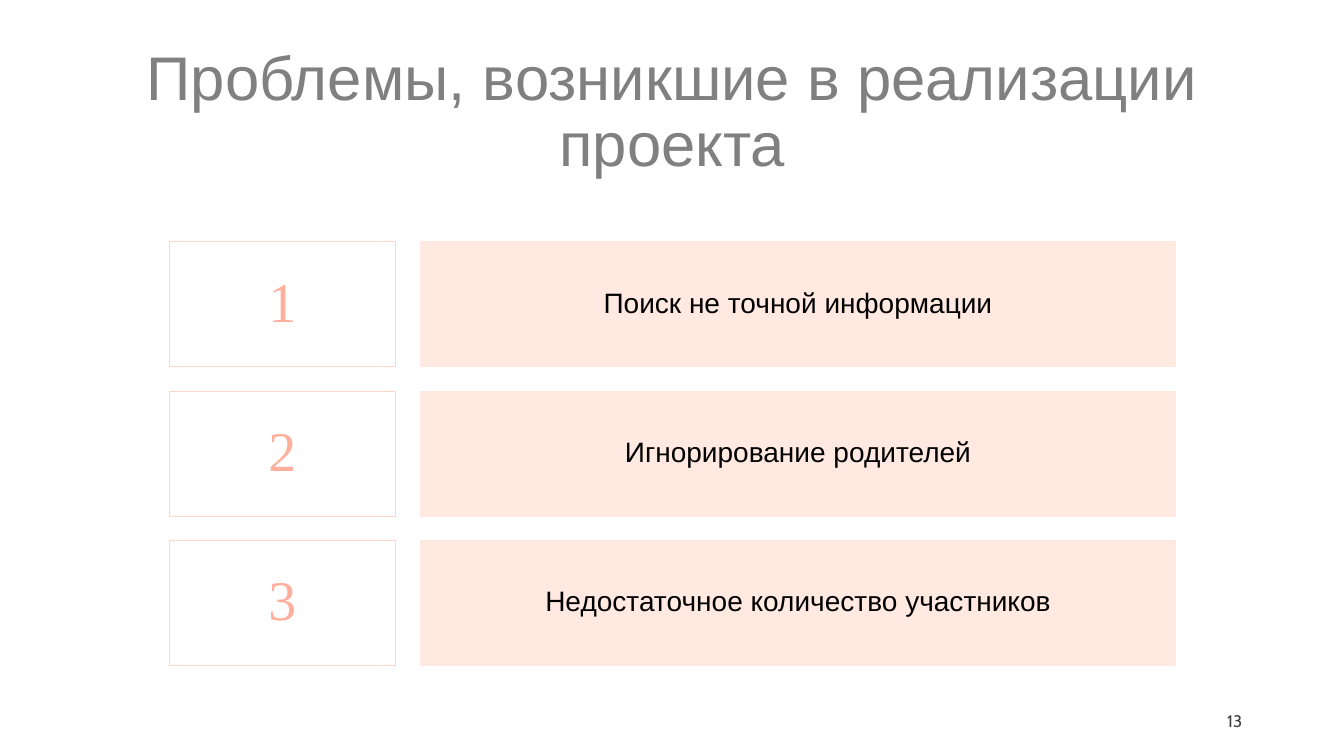
from pptx import Presentation, util as u
from pptx.dml.color import RGBColor
from pptx.enum import shapes, text

HUES = {"title": "808080", "digit": "FFB09D", "edge": "FFD7C7",
        "panel": "FFE9E0", "ink": "000000", "page": "404040"}
ALIGN = text.PP_ALIGN
ROWS = ["Поиск не точной информации",
        "Игнорирование родителей",
        "Недостаточное количество участников"]


def hue(name):
    return RGBColor.from_string(HUES[name])


def write(shape, words, font, size, color, align=ALIGN.CENTER, lead=0.9, inset=None):
    frame = shape.text_frame
    format = {"word_wrap": True, "auto_size": text.MSO_AUTO_SIZE.NONE,
              "vertical_anchor": text.MSO_ANCHOR.MIDDLE}
    if inset is not None:
        for side in ("left", "top", "right", "bottom"):
            format["margin_" + side] = u.Inches(inset)
    for key, value in format.items():
        setattr(frame, key, value)
    line = frame.paragraphs[0]
    line.text = words
    line.alignment, line.line_spacing = align, lead
    for key, value in {"name": font, "size": u.Pt(size)}.items():
        setattr(line.font, key, value)
    line.font.color.rgb = hue(color)


def add_title(slide, box, words):
    title = slide.shapes.title
    for key, value in zip(("left", "top", "width", "height"), box):
        setattr(title, key, u.Inches(value))
    write(title, words, "Arial", 44, "title")


def add_rect(slide, box, edge, fill=None):
    rect = slide.shapes.add_shape(shapes.MSO_SHAPE.RECTANGLE, *map(u.Inches, box))
    rect.shadow.inherit = False
    rect.line.color.rgb = hue(edge)
    rect.line.width = u.Pt(0.75)
    if fill:
        rect.fill.solid()
        rect.fill.fore_color.rgb = hue(fill)
    else:
        rect.fill.background()
    return rect


def add_rows(slide, box, rows):
    left, top, width, height = box
    gap = 0.24
    tall = (height - gap * (len(rows) - 1)) / len(rows)
    slim = 2.24
    start = slim + 0.25
    for i, words in enumerate(rows):
        y = top + i * (tall + gap)
        # Number cell
        cell = add_rect(slide, (left, y, slim, tall), "edge")
        write(cell, str(i + 1), "Times New Roman", 40, "digit")
        # Problem panel
        panel = add_rect(slide, (left + start, y, width - start, tall), "panel", "panel")
        write(panel, words, "Arial", 20, "ink", inset=0)


def add_page(slide, box, number):
    note = slide.shapes.add_textbox(*map(u.Inches, box))
    write(note, number, "Cabin", 12, "page", ALIGN.RIGHT, 1)


def main():
    deck = Presentation()
    deck.slide_width, deck.slide_height = u.Inches(13.33), u.Inches(7.5)
    slide = deck.slides.add_slide(deck.slide_layouts[5])
    add_title(slide, (0.92, 0.4, 11.5, 1.45), "Проблемы, возникшие в реализации проекта")
    add_rows(slide, (1.68, 2.4, 9.98, 4.2), ROWS)
    add_page(slide, (9.42, 6.95, 3, 0.4), "13")
    deck.save("out.pptx")


if __name__ == "__main__":
    main()
